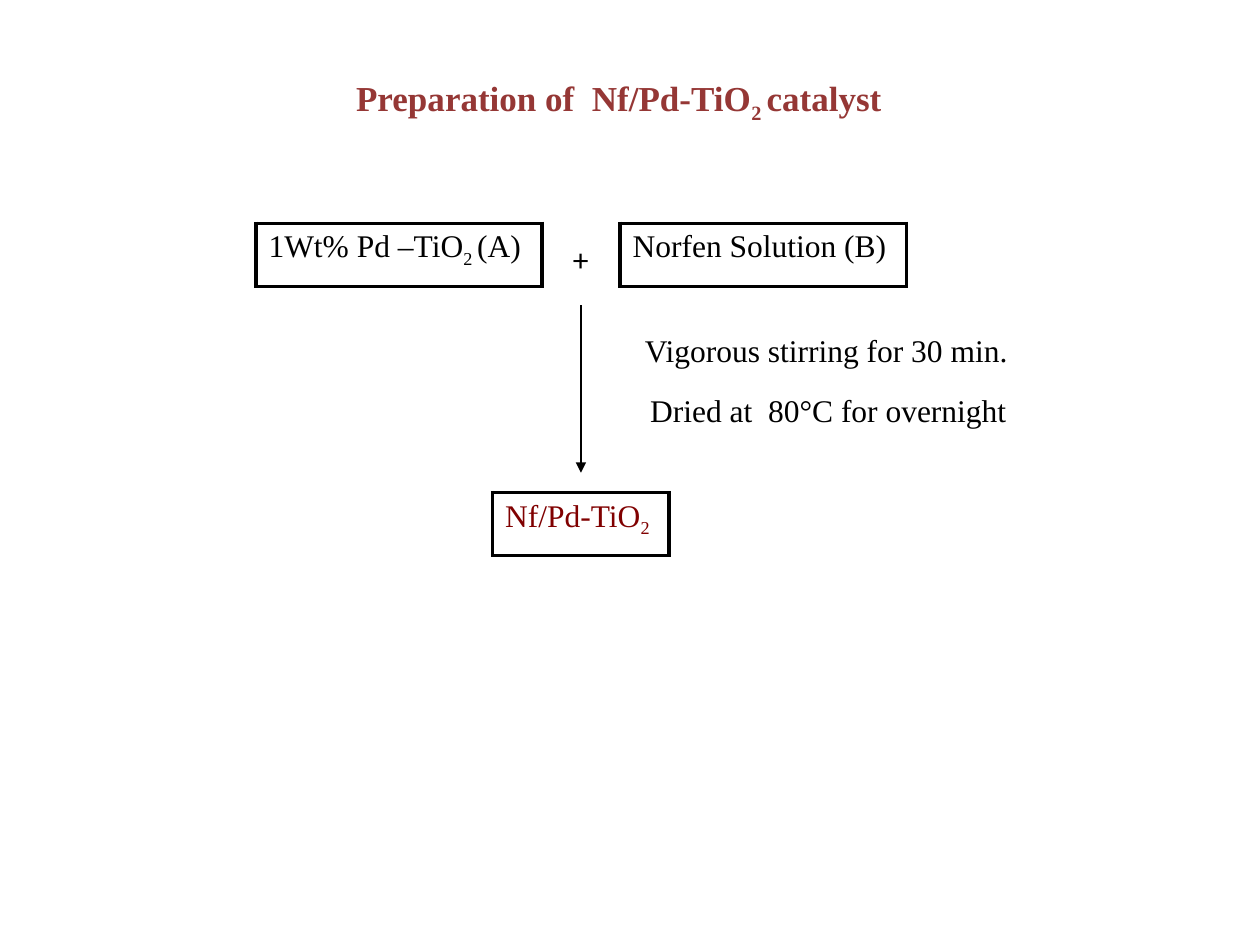
from dataclasses import dataclass

from lxml import etree
from pptx import Presentation
from pptx.dml.color import RGBColor
from pptx.enum.shapes import MSO_CONNECTOR
from pptx.enum.text import MSO_AUTO_SIZE
from pptx.oxml import parse_xml
from pptx.oxml.ns import qn
from pptx.util import Cm, Pt

LINE = MSO_CONNECTOR.STRAIGHT
GROW = MSO_AUTO_SIZE.SHAPE_TO_FIT_TEXT
NS = "http://schemas.openxmlformats.org/drawingml/2006/main"


@dataclass(frozen=True)
class Theme:
    black: str = "000000"
    title: str = "953735"
    prod: str = "800000"
    serif: str = "Times New Roman"
    sans: str = "Calibri"
    head: int = 20
    body: int = 18
    thin: float = 0.75
    thick: float = 2.25
    sub: str = "-25000"


class Deck:
    def __init__(self, theme):
        self.theme = theme
        self.prs = Presentation()
        self.prs.slide_width, self.prs.slide_height = Cm(25.4), Cm(19.05)
        self.slide = self.prs.slides.add_slide(self.prs.slide_layouts[6])

    def label(self, frame, parts, color=None, **form):
        base = {"name": self.theme.serif, "size": self.theme.body}
        form = {**base, **form}
        form["size"] = Pt(form["size"])
        for part in parts:
            low = part.startswith("_")
            run = frame.paragraphs[0].add_run()
            run.text = part.lstrip("_")
            for key, val in form.items():
                setattr(run.font, key, val)
            run.font.color.rgb = RGBColor.from_string(color or self.theme.black)
            if low:
                run.font._element.set("baseline", self.theme.sub)

    def text(self, x, y, w, h, parts, wrap=False, **form):
        frame = self.slide.shapes.add_textbox(Cm(x), Cm(y), Cm(w), Cm(h)).text_frame
        for key, val in {"word_wrap": wrap, "auto_size": GROW}.items():
            setattr(frame, key, val)
        self.label(frame, parts, **form)

    def box(self, x, y, w, h, parts, **form):
        table = self.slide.shapes.add_table(1, 1, Cm(x), Cm(y), Cm(w), Cm(h)).table
        for key in ("first_row", "horz_banding"):
            setattr(table, key, False)
        cell = table.cell(0, 0)
        props = cell._tc.get_or_add_tcPr()
        for side in "LRTB":
            props.append(parse_xml(
                f'<a:ln{side} xmlns:a="{NS}" w="{Pt(self.theme.thick)}"><a:solidFill>'
                f'<a:srgbClr val="{self.theme.black}"/></a:solidFill></a:ln{side}>'
            ))
        cell.fill.background()
        self.label(cell.text_frame, parts, **form)

    def arrow(self, x, top, end):
        link = self.slide.shapes.add_connector(LINE, Cm(x), Cm(top), Cm(x), Cm(end))
        link.line.color.rgb = RGBColor.from_string(self.theme.black)
        link.line.width = Pt(self.theme.thin)
        etree.SubElement(link.line._get_or_add_ln(), qn("a:tailEnd"), type="triangle")
        etree.SubElement(link._element.spPr, qn("a:effectLst"))


def main():
    theme = Theme()
    deck = Deck(theme)
    deck.text(6.93, 1.42, 11.46, 1.12,
              ["Preparation of  Nf/Pd-TiO", "_2 ", "catalyst"],
              color=theme.title, size=theme.head, bold=True)

    inputs = [
        (5.16, ["1Wt% Pd –TiO", "_2 ", "(A)"]),
        (12.5, ["Norfen Solution (B)"]),
    ]
    for x, parts in inputs:
        deck.box(x, 4.5, 5.77, 1.27, parts)
    deck.text(11.3, 4.72, 0.84, 1.02, ["+"], name=theme.sans)

    deck.arrow(11.71, 6.15, 9.53)
    deck.text(12.75, 6.55, 8.05, 1.02, ["Vigorous stirring for 30 min."])
    deck.text(12.7, 7.75, 7.92, 1.02, [" Dried at  80°C for overnight"], wrap=True)
    deck.box(9.93, 9.93, 3.56, 1.27, ["Nf/Pd-TiO", "_2"], color=theme.prod)
    deck.prs.save("out.pptx")


if __name__ == "__main__":
    main()
